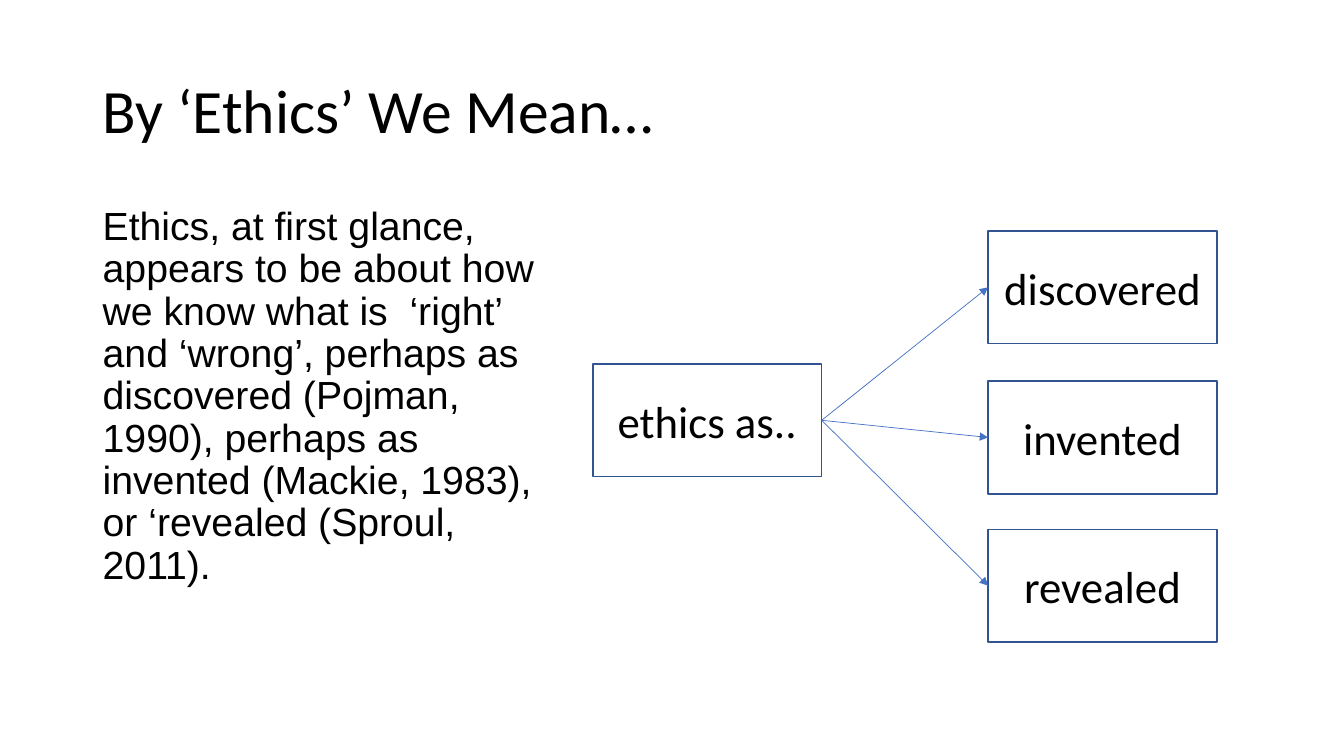
import pptx
import pptx.dml.color
import pptx.enum.shapes
import pptx.enum.text
import pptx.oxml
import pptx.oxml.ns
import pptx.util
from pptx.util import Inches

ALIGN = pptx.enum.text.PP_ALIGN
ANCHOR = pptx.enum.text.MSO_ANCHOR
LEFT_SITE, RIGHT_SITE = 1, 3
BOX_W, BOX_H = 2.27, 1.12
SOURCE_LEFT, SOURCE_TOP = 5.88, 3.61
OUTCOME_LEFT = 9.8
OUTCOMES = [("discovered", 2.29), ("invented", 3.78), ("revealed", 5.25)]
DEFINITION = (
    "Ethics, at first glance, appears to be about how we know what is  ‘right’ "
    "and ‘wrong’, perhaps as discovered (Pojman, 1990), perhaps as invented "
    "(Mackie, 1983), or ‘revealed (Sproul, 2011)."
)


def rgb(hex_color):
    return pptx.dml.color.RGBColor.from_string(hex_color)


def set_text(sp, text, size, font="Calibri", color="000000", align=ALIGN.LEFT,
             anchor=ANCHOR.MIDDLE, line_spacing=1.0, space_after=0):
    tf = sp.text_frame
    tf.word_wrap = True
    tf.vertical_anchor = anchor
    p = tf.paragraphs[0]
    p.alignment = align
    p.line_spacing = line_spacing
    p.space_after = pptx.util.Pt(space_after)
    r = p.add_run()
    r.text = text
    r.font.size = pptx.util.Pt(size)
    r.font.name = font
    r.font.color.rgb = rgb(color)


def add_text(s, text, left, top, width, height, **fmt):
    sp = s.shapes.add_textbox(Inches(left), Inches(top), Inches(width), Inches(height))
    set_text(sp, text, **fmt)


def add_box(s, text, left, top):
    sp = s.shapes.add_shape(pptx.enum.shapes.MSO_SHAPE.RECTANGLE,
                            Inches(left), Inches(top), Inches(BOX_W), Inches(BOX_H))
    sp.shadow.inherit = False
    sp.fill.background()
    sp.line.color.rgb = rgb("325491")
    sp.line.width = pptx.util.Pt(1)
    set_text(sp, text, size=32, align=ALIGN.CENTER)
    return sp


def add_arrow(s, source, target):
    """Link the right side of source to the left side of target."""
    cxn = s.shapes.add_connector(pptx.enum.shapes.MSO_CONNECTOR.STRAIGHT, 0, 0, 0, 0)
    cxn.begin_connect(source, RIGHT_SITE)
    cxn.end_connect(target, LEFT_SITE)
    cxn.line.color.rgb = rgb("4472C4")
    cxn.line.width = pptx.util.Pt(0.5)
    ns = pptx.oxml.ns.nsdecls("a")
    cxn.line._get_or_add_ln().append(
        pptx.oxml.parse_xml(f'<a:tailEnd {ns} type="triangle"/>'))
    cxn._element.spPr.append(pptx.oxml.parse_xml(f"<a:effectLst {ns}/>"))


def main():
    prs = pptx.Presentation()
    prs.slide_width, prs.slide_height = Inches(13.33), Inches(7.5)
    s = prs.slides.add_slide(prs.slide_layouts[6])

    add_text(s, "By ‘Ethics’ We Mean…", 0.92, 0.4, 11.5, 1.45, size=44, line_spacing=0.9)
    add_text(s, DEFINITION, 0.92, 2, 4.62, 4.76, size=28, font="Arial",
             anchor=ANCHOR.TOP, line_spacing=0.9, space_after=10)

    source = add_box(s, "ethics as..", SOURCE_LEFT, SOURCE_TOP)
    targets = [add_box(s, text, OUTCOME_LEFT, top) for text, top in OUTCOMES]
    for target in targets:
        add_arrow(s, source, target)

    prs.save("out.pptx")


if __name__ == "__main__":
    main()
